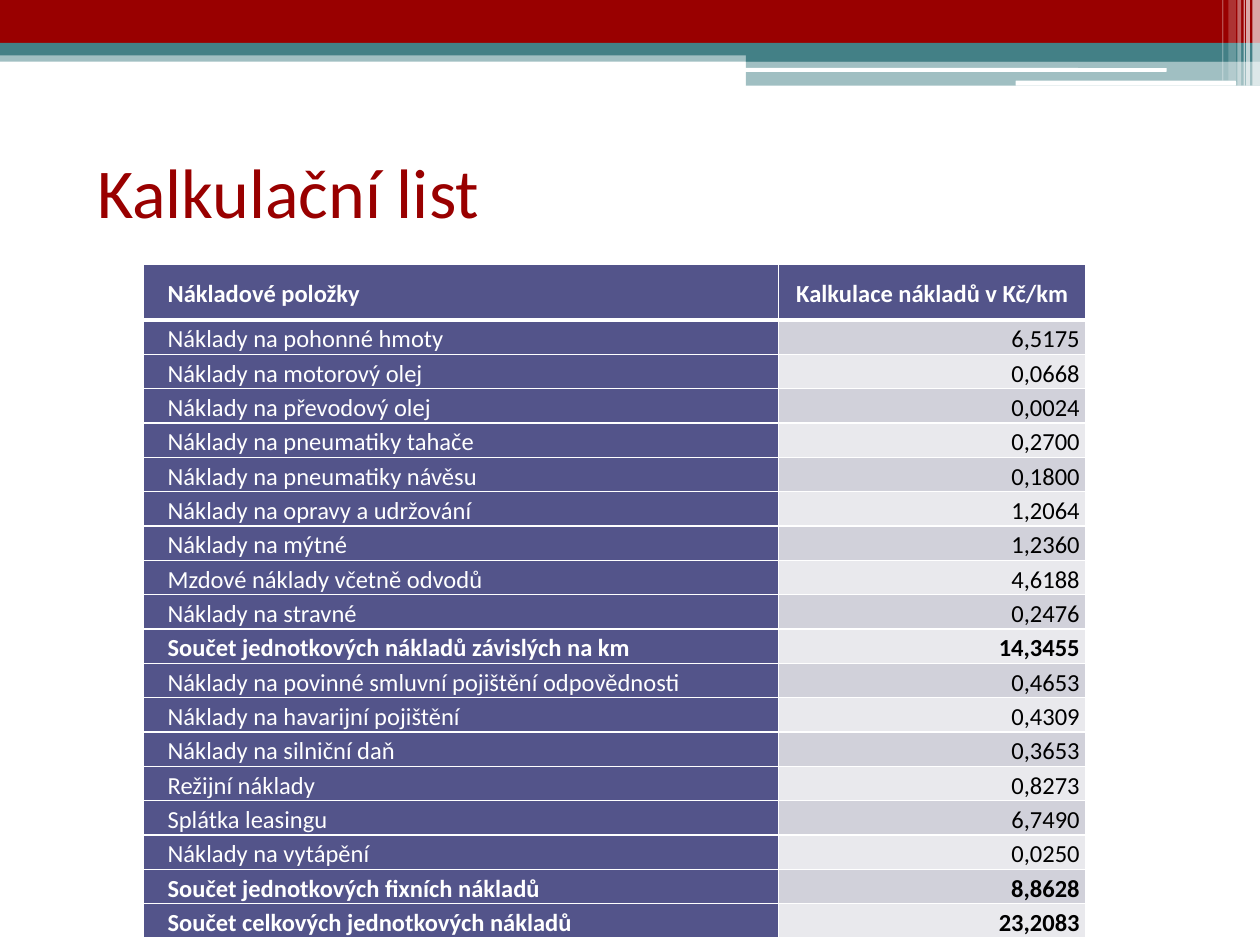
"""Build the cost calculation slide with its banner, title and table."""
from typing import NamedTuple

from lxml.etree import SubElement
from pptx import Presentation
from pptx.dml.color import RGBColor as Rgb
from pptx.enum.shapes import MSO_SHAPE as Preset
from pptx.enum.text import MSO_ANCHOR as Anchor, PP_ALIGN as Align
from pptx.oxml.ns import qn
from pptx.util import Inches, Pt

COLORS = {
    "red": "990000",
    "teal": "438086",
    "white": "FFFFFF",
    "black": "000000",
    "purple": "53548A",
    "band_dark": "D1D1DA",
    "band_light": "E9E9ED",
}
FONT = "Calibri"


class Bar(NamedTuple):
    left: float
    top: float
    width: float
    height: float
    color: str
    opacity: int = 100
    rounded: bool = False


class Cost(NamedTuple):
    name: str
    value: str
    bold: bool = False


BARS = [
    Bar(0, 0.4, 10, 0.09, "teal", 50),
    Bar(0, 0, 10, 0.34, "red"),
    Bar(0, 0.34, 10, 0.1, "teal"),
    Bar(5.92, 0.39, 4.08, 0.1, "teal"),
    Bar(5.92, 0.48, 4.08, 0.2, "teal", 50),
    Bar(5.91, 0.54, 3.35, 0.03, "white", rounded=True),
    Bar(8.06, 0.64, 1.75, 0.04, "white", rounded=True),
    Bar(9.94, 0, 0.06, 0.68, "white", 65),
    Bar(9.89, 0, 0.03, 0.68, "white", 65),
    Bar(9.87, 0, 0.01, 0.68, "white", 60),
    Bar(9.82, 0, 0.03, 0.68, "white", 40),
    Bar(9.75, 0, 0.06, 0.64, "white", 20),
    Bar(9.7, 0, 0.01, 0.64, "white", 30),
]

HEADER = Cost("Nákladové položky", "Kalkulace nákladů v Kč/km", True)
COSTS = [
    Cost("Náklady na pohonné hmoty", "6,5175"),
    Cost("Náklady na motorový olej", "0,0668"),
    Cost("Náklady na převodový olej", "0,0024"),
    Cost("Náklady na pneumatiky tahače", "0,2700"),
    Cost("Náklady na pneumatiky návěsu", "0,1800"),
    Cost("Náklady na opravy a udržování", "1,2064"),
    Cost("Náklady na mýtné", "1,2360"),
    Cost("Mzdové náklady včetně odvodů", "4,6188"),
    Cost("Náklady na stravné", "0,2476"),
    Cost("Součet jednotkových nákladů závislých na km", "14,3455", True),
    Cost("Náklady na povinné smluvní pojištění odpovědnosti", "0,4653"),
    Cost("Náklady na havarijní pojištění", "0,4309"),
    Cost("Náklady na silniční daň", "0,3653"),
    Cost("Režijní náklady", "0,8273"),
    Cost("Splátka leasingu", "6,7490"),
    Cost("Náklady na vytápění", "0,0250"),
    Cost("Součet jednotkových fixních nákladů", "8,8628", True),
    Cost("Součet celkových jednotkových nákladů", "23,2083", True),
]


def write_text(frame, text: str, *, size: float, color: str, bold: bool = False,
               align=Align.LEFT, spacing: float = 1.0, indent: float = 0) -> None:
    para = frame.paragraphs[0]
    para.alignment = align
    para.line_spacing = spacing
    if indent:
        properties = para._p.get_or_add_pPr()
        properties.set("marL", "0")
        properties.set("indent", str(Inches(indent)))
    span = para.add_run()
    span.text = text
    span.font.name = FONT
    span.font.size = Pt(size)
    span.font.bold = bold
    span.font.color.rgb = Rgb.from_string(COLORS[color])


def draw_bar(slide, bar: Bar) -> None:
    preset = Preset.ROUNDED_RECTANGLE if bar.rounded else Preset.RECTANGLE
    place = map(Inches, (bar.left, bar.top, bar.width, bar.height))
    shape = slide.shapes.add_shape(preset, *place)
    shape.shadow.inherit = False
    shape.line.fill.background()
    shape.fill.solid()
    shape.fill.fore_color.rgb = Rgb.from_string(COLORS[bar.color])
    if bar.opacity < 100:
        color = shape._element.spPr.find(f"{qn('a:solidFill')}/{qn('a:srgbClr')}")
        SubElement(color, qn("a:alpha"), val=str(bar.opacity * 1000))


def style_cell(cell, fill: str, anchor, top: float, bottom: float) -> None:
    cell.margin_left = cell.margin_right = Inches(0.05)
    cell.margin_top = cell.margin_bottom = 0
    cell.vertical_anchor = anchor
    properties = cell._tc.get_or_add_tcPr()
    for side, width in {"L": 1, "R": 1, "T": top, "B": bottom}.items():
        border = SubElement(properties, qn(f"a:ln{side}"), w=str(Pt(width)))
        solid = SubElement(border, qn("a:solidFill"))
        SubElement(solid, qn("a:srgbClr"), val=COLORS["white"])
    cell.fill.solid()
    cell.fill.fore_color.rgb = Rgb.from_string(COLORS[fill])


def draw_costs(slide) -> None:
    rows = [HEADER, *COSTS]
    place = map(Inches, (1.14, 2.1, 7.48, 4.97))
    table = slide.shapes.add_table(len(rows), 2, *place).table
    for column, width in zip(table.columns, (5.04, 2.44)):
        column.width = Inches(width)
    for index, cost in enumerate(rows):
        header = index == 0
        table.rows[index].height = Inches(0.44 if header else 0.21)
        band = "band_dark" if index % 2 else "band_light"
        anchor = Anchor.MIDDLE if header else Anchor.BOTTOM
        name, value = table.cell(index, 0), table.cell(index, 1)
        for cell, fill in ((name, "purple"), (value, "purple" if header else band)):
            style_cell(cell, fill, anchor, 3 if index == 1 else 1, 3 if header else 1)
        write_text(name.text_frame, cost.name, size=14, color="white",
                   bold=cost.bold, spacing=1.15, indent=0.14)
        write_text(value.text_frame, cost.value, size=14, bold=cost.bold, spacing=1.15,
                   color="white" if header else "black",
                   align=Align.CENTER if header else Align.RIGHT,
                   indent=0 if header else 0.14)


def main() -> None:
    deck = Presentation()
    deck.slide_width, deck.slide_height = Inches(10), Inches(7.5)
    slide = deck.slides.add_slide(deck.slide_layouts[5])
    for bar in BARS:
        draw_bar(slide, bar)
    title = slide.shapes.title
    title.left, title.top, title.width, title.height = map(Inches, (0.67, 0.93, 9, 1.17))
    title.text_frame.vertical_anchor = Anchor.MIDDLE
    write_text(title.text_frame, "Kalkulační list", size=40, color="red")
    draw_costs(slide)
    deck.save("out.pptx")


if __name__ == "__main__":
    main()
